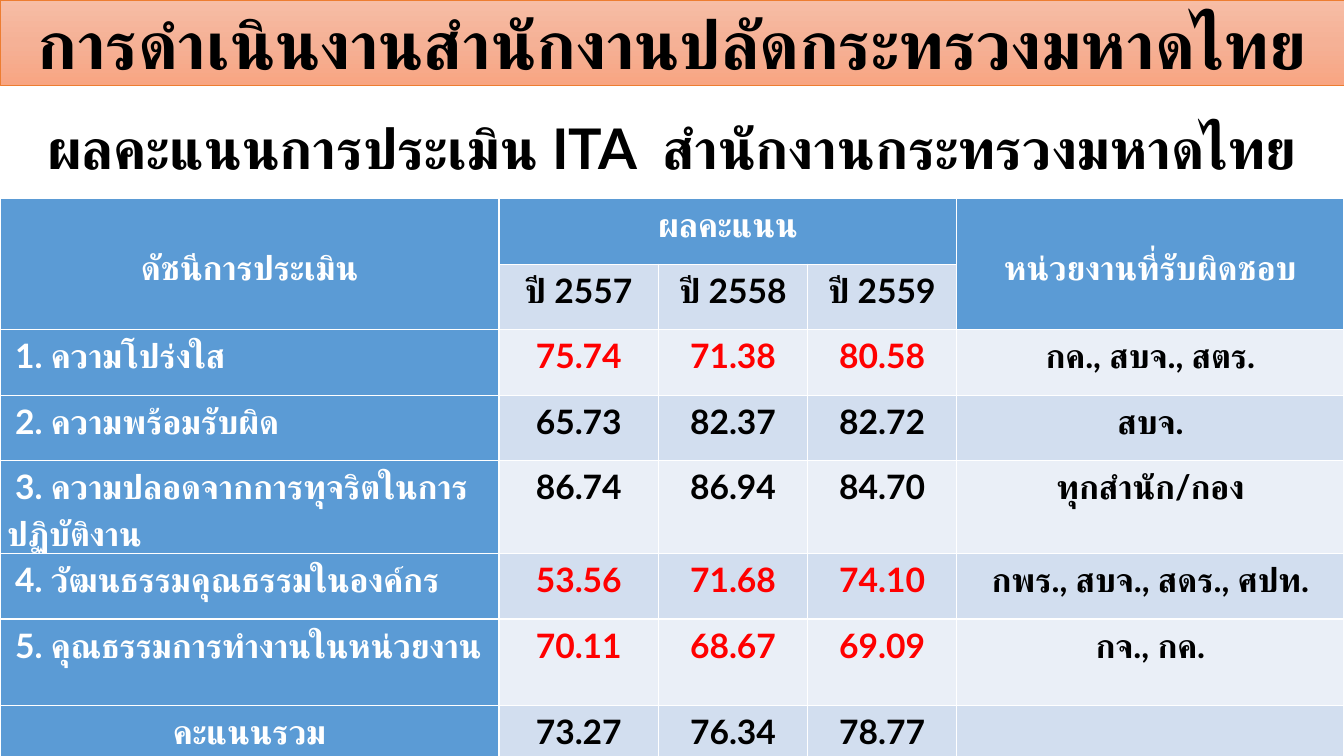
from copy import deepcopy

from lxml.etree import SubElement
from pptx import Presentation
from pptx.dml.color import RGBColor
from pptx.enum.shapes import MSO_SHAPE
from pptx.enum.text import MSO_ANCHOR as ANCHOR, MSO_AUTO_SIZE, PP_ALIGN as ALIGN
from pptx.oxml.ns import qn
from pptx.util import Inches, Pt

FONT = "Lato"
COLORS = {
    "black": "000000", "white": "FFFFFF", "red": "FF0000",
    "header": "5B9BD5", "band_dark": "D2DEEF", "band_light": "EAEFF7",
    "banner_top": "F7BDA5", "banner_middle": "F5B196", "banner_bottom": "F8A582",
    "banner_line": "ED7D31",
}


def rgb(name):
    return RGBColor.from_string(COLORS[name])


def write(frame, text, size=24, color="black", align=ALIGN.CENTER,
          anchor=ANCHOR.TOP, spacing=1.0):
    """Put one bold paragraph into a text frame or a table cell."""
    frame.vertical_anchor = anchor
    paragraph = getattr(frame, "text_frame", frame).paragraphs[0]
    paragraph.alignment = align
    paragraph.line_spacing = spacing
    run = paragraph.add_run()
    run.text = text
    run.font.name = FONT
    run.font.size = Pt(size)
    run.font.bold = True
    run.font.color.rgb = rgb(color)
    # Thai letters take the complex-script font
    SubElement(run.font._element, qn("a:cs")).set("typeface", FONT)


prs = Presentation()
prs.slide_width, prs.slide_height = Inches(13.33), Inches(7.5)
slide = prs.slides.add_slide(prs.slide_layouts[5])

# Title
title = slide.shapes.title
title.left, title.top = Inches(0), Inches(1.03)
title.width, title.height = Inches(13.33), Inches(0.94)
title.text_frame.auto_size = MSO_AUTO_SIZE.NONE
write(title.text_frame, "ผลคะแนนการประเมิน ITA  สำนักงานกระทรวงมหาดไทย",
      size=40, anchor=ANCHOR.MIDDLE, spacing=0.9)

# Score table
column_widths = [4.95, 1.58, 1.48, 1.48, 3.84]
row_heights = [0.65, 0.65, 0.65, 0.65, 0.76, 0.65, 0.86, 0.65]
score_rows = [
    ["ดัชนีการประเมิน", "ผลคะแนน", None, None, "หน่วยงานที่รับผิดชอบ"],
    [None, "ปี 2557", "ปี 2558", "ปี 2559", None],
    [" 1. ความโปร่งใส", "75.74", "71.38", "80.58", "กค., สบจ., สตร."],
    [" 2. ความพร้อมรับผิด", "65.73", "82.37", "82.72", "สบจ."],
    [" 3. ความปลอดจากการทุจริตในการปฏิบัติงาน", "86.74", "86.94", "84.70", "ทุกสำนัก/กอง"],
    [" 4. วัฒนธรรมคุณธรรมในองค์กร", "53.56", "71.68", "74.10", "กพร., สบจ., สดร., ศปท."],
    [" 5. คุณธรรมการทำงานในหน่วยงาน", "70.11", "68.67", "69.09", "กจ., กค."],
    ["คะแนนรวม", "73.27", "76.34", "78.77", ""],
]
red_score_rows = {2, 5, 6}
last_row = len(score_rows) - 1

scores = slide.shapes.add_table(
    len(row_heights), len(column_widths),
    Inches(0), Inches(1.97), Inches(13.33), Inches(5.53)).table
scores.first_col = True
for column, width in zip(scores.columns, column_widths):
    column.width = Inches(width)
for row, height in zip(scores.rows, row_heights):
    row.height = Inches(height)

for first, last in [((0, 0), (1, 0)), ((0, 1), (0, 3)), ((0, 4), (1, 4))]:
    scores.cell(*first).merge(scores.cell(*last))

for r, texts in enumerate(score_rows):
    for c, text in enumerate(texts):
        cell = scores.cell(r, c)
        is_header = r == 0 or c == 0 or text is None
        cell.fill.solid()
        cell.fill.fore_color.rgb = rgb(
            "header" if is_header else "band_dark" if r % 2 else "band_light")
        cell.margin_left = cell.margin_right = Inches(0.07)
        cell.margin_top = cell.margin_bottom = 0
        if text is None:
            continue
        is_score = 1 <= c <= 3
        write(cell, text, spacing=1.15,
              color="white" if is_header
              else "red" if is_score and r in red_score_rows else "black",
              align=ALIGN.LEFT if c == 0 and 0 < r < last_row else ALIGN.CENTER,
              anchor=ANCHOR.MIDDLE if r == 0 and not is_score else ANCHOR.TOP)

# Banner
banner = slide.shapes.add_shape(
    MSO_SHAPE.RECTANGLE, Inches(0), Inches(0), Inches(13.33), Inches(0.85))
banner.shadow.inherit = False
banner.line.color.rgb = rgb("banner_line")
banner.line.width = Pt(0.5)
banner.fill.gradient()
banner.fill.gradient_angle = 270
for stop, name in zip(banner.fill.gradient_stops, ["banner_top", "banner_bottom"]):
    stop.color.rgb = rgb(name)
stop_list = banner.element.spPr.find(".//" + qn("a:gsLst"))
middle_stop = deepcopy(stop_list[0])
middle_stop.set("pos", "50000")
middle_stop[0].set("val", COLORS["banner_middle"])
stop_list.insert(1, middle_stop)
write(banner.text_frame, "การดำเนินงานสำนักงานปลัดกระทรวงมหาดไทย",
      size=48, anchor=ANCHOR.MIDDLE)

prs.save("out.pptx")
